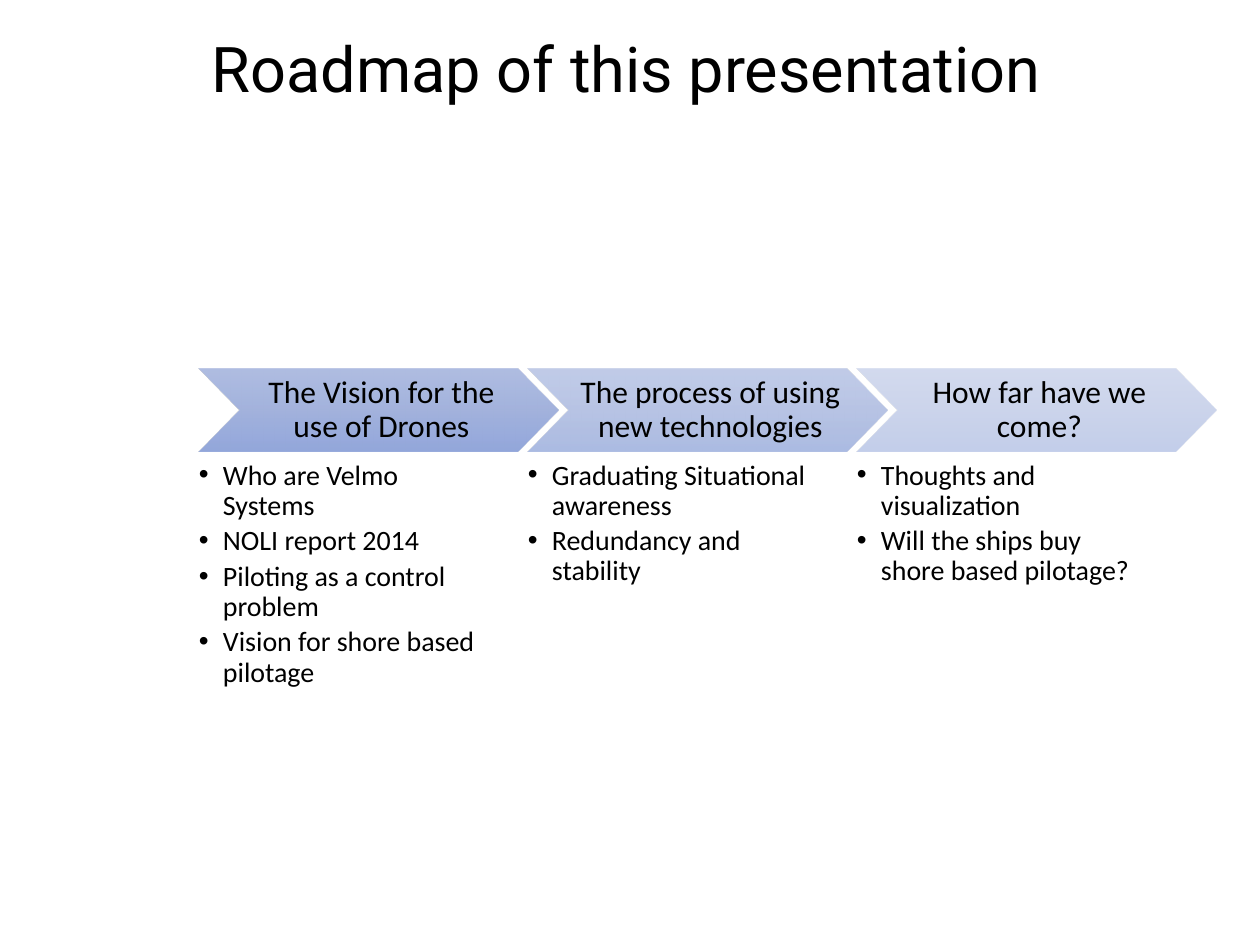
from lxml.etree import SubElement
from pptx import Presentation
from pptx.dml.color import RGBColor
from pptx.enum.shapes import MSO_SHAPE
from pptx.enum.text import MSO_ANCHOR, PP_ALIGN
from pptx.oxml.ns import qn
from pptx.util import Emu, Pt

TITLE = "Roadmap of this presentation"
STAGES = [
    ("The Vision for the use of Drones", 90,
     ["Who are Velmo Systems", "NOLI report 2014", "Piloting as a control problem",
      "Vision for shore based pilotage"]),
    ("The process of using new technologies", 70,
     ["Graduating Situational awareness", "Redundancy and stability"]),
    ("How far have we come?", 50,
     ["Thoughts and visualization", "Will the ships buy shore based pilotage?"]),
]
GRADIENT = [(0, "A8B7DF"), (50, "9AABD9"), (100, "889ED7")]
STAGE_PITCH = 329
CHEVRON_WIDTH, CHEVRON_HEIGHT = 359, 82
BULLET_INDENT = 24


def px(length):
    """Turn pixels into EMU."""
    return Emu(round(length * 914400 / 126))


def color(value):
    """Turn a hex string into a colour."""
    return RGBColor.from_string(value)


def add_text(page, box, lines, font, size, spacing, insets, anchor=MSO_ANCHOR.TOP,
             align=PP_ALIGN.LEFT, bullets=False):
    """Place a wrapped text box with one paragraph per line."""
    frame = page.shapes.add_textbox(*map(px, box)).text_frame
    frame.word_wrap = True
    frame.vertical_anchor = anchor
    frame.margin_left, frame.margin_top, frame.margin_right, frame.margin_bottom = map(px, insets)
    frame.text = "\n".join(lines)
    for para in frame.paragraphs:
        para.alignment = align
        para.line_spacing = spacing
        if bullets:
            para.space_after = Pt(3)
            add_bullet(para)
        for span in para.runs:
            span.font.name = font
            span.font.size = Pt(size)
            span.font.color.rgb = color("000000")


def add_bullet(para):
    """Give a paragraph a hanging bullet."""
    properties = para._p.get_or_add_pPr()
    properties.set("marL", str(px(BULLET_INDENT)))
    properties.set("indent", str(-px(BULLET_INDENT)))
    SubElement(properties, qn("a:buFont"), typeface="Arial")
    SubElement(properties, qn("a:buChar"), char="•")


def fill_gradient(shape, opacity):
    """Fill a shape with the translucent downward gradient."""
    shape.fill.gradient()
    gradient = shape._element.spPr.find(qn("a:gradFill"))
    stops = gradient.find(qn("a:gsLst"))
    for stop in list(stops):
        stops.remove(stop)
    for position, value in GRADIENT:
        stop = SubElement(stops, qn("a:gs"), pos=str(position * 1000))
        tint = SubElement(stop, qn("a:srgbClr"), val=value)
        SubElement(tint, qn("a:alpha"), val=str(opacity * 1000))
    gradient.find(qn("a:lin")).set("ang", "5400000")


def add_title(page, box):
    """Place the slide title."""
    add_text(page, box, [TITLE], "Roboto", 36, 0.8, (13, 6, 13, 6), align=PP_ALIGN.CENTER)


def add_stage(page, left, top, heading, opacity, points):
    """Place one chevron with its heading and the points below."""
    chevron = page.shapes.add_shape(
        MSO_SHAPE.CHEVRON, *map(px, (left, top, CHEVRON_WIDTH, CHEVRON_HEIGHT)))
    chevron.shadow.inherit = False
    chevron.line.fill.background()
    fill_gradient(chevron, opacity)
    notch = CHEVRON_HEIGHT // 2
    add_text(page, (left + notch, top, CHEVRON_WIDTH - 2 * notch, CHEVRON_HEIGHT), [heading],
             "Calibri", 18, 0.9, (10, 4, 4, 4), MSO_ANCHOR.MIDDLE, PP_ALIGN.CENTER)
    add_text(page, (left, top + CHEVRON_HEIGHT + 10, 287, 341), points,
             "Calibri", 16, 0.9, (0, 0, 0, 0), bullets=True)


def add_roadmap(page, left, top):
    """Place the stages in a row at an even pitch."""
    for index, stage in enumerate(STAGES):
        add_stage(page, left + index * STAGE_PITCH, top, *stage)


def main():
    """Build and save the deck."""
    deck = Presentation()
    deck.slide_width, deck.slide_height = px(1260), px(945)
    page = deck.slides.add_slide(deck.slide_layouts[6])
    add_title(page, (59, 38, 1135, 137))
    add_roadmap(page, 199, 369)
    deck.save("out.pptx")


if __name__ == "__main__":
    main()
